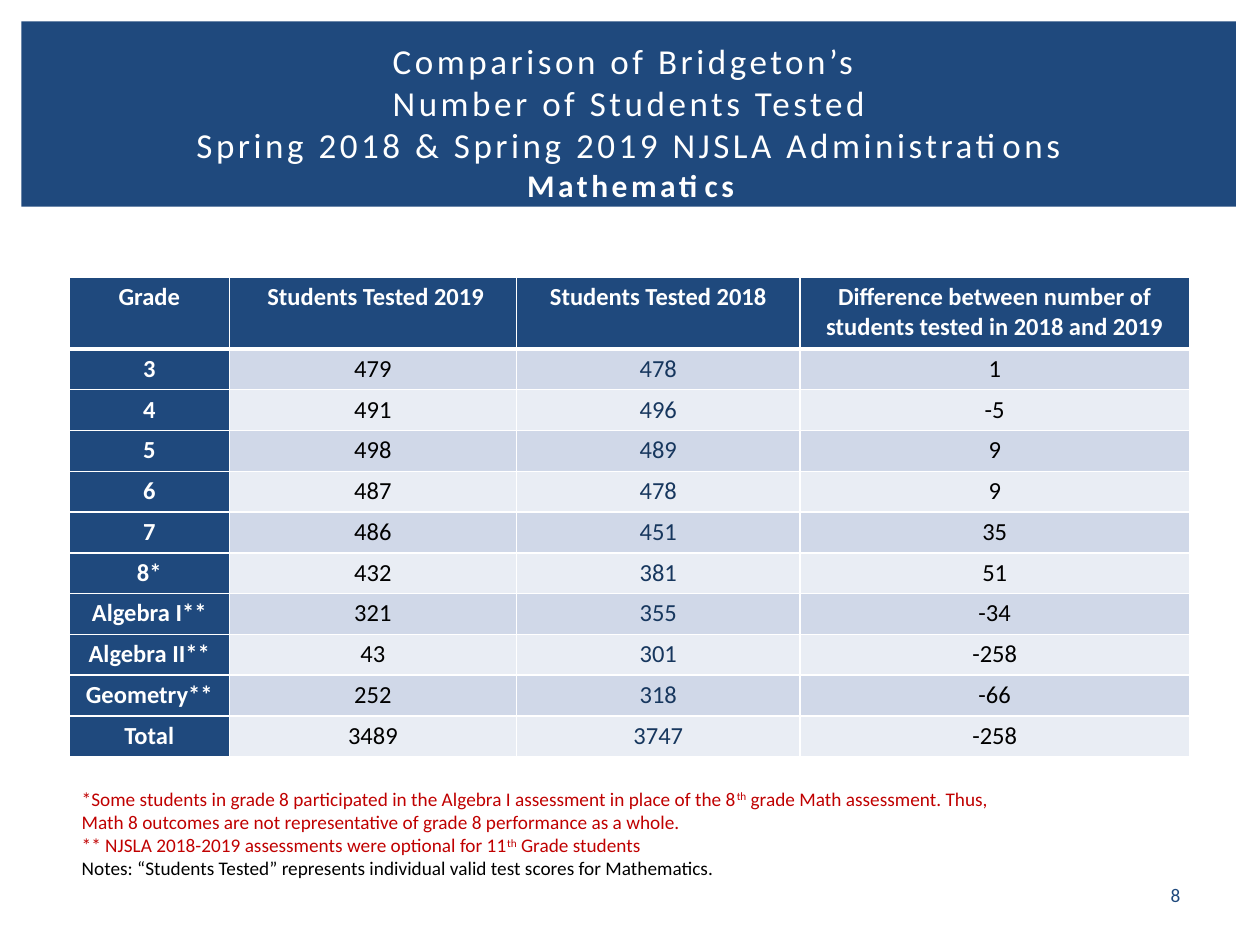
from dataclasses import dataclass

from lxml.etree import SubElement
from pptx import Presentation
from pptx.dml.color import RGBColor
from pptx.enum.shapes import MSO_SHAPE
from pptx.enum.text import MSO_ANCHOR, MSO_AUTO_SIZE, PP_ALIGN
from pptx.oxml.ns import qn
from pptx.util import Inches, Pt


@dataclass(frozen=True)
class Theme:
    font: str = "Calibri"
    navy: str = "1F497D"
    dark_blue: str = "17375E"
    white: str = "FFFFFF"
    black: str = "000000"
    red: str = "C00000"
    bands: tuple = ("D0D8E8", "E9EDF4")
    title: int = 20
    subject: int = 18
    table: int = 14
    note: int = 11


theme = Theme()
deck = Presentation()
deck.slide_width, deck.slide_height = Inches(10), Inches(7.5)
slide = deck.slides.add_slide(deck.slide_layouts[5])


def share(left, top, width, height):
    across, down = deck.slide_width / 100, deck.slide_height / 100
    return [round(n) for n in (left * across, top * down, width * across, height * down)]


def add_run(paragraph, text, size, color, bold=False):
    run = paragraph.add_run()
    run.text = text
    run.font.name = theme.font
    run.font.size = Pt(size)
    run.font.bold = bold
    run.font.color.rgb = RGBColor.from_string(color)
    return run


banner = slide.shapes.add_shape(MSO_SHAPE.RECTANGLE, *share(1.7, 2.27, 96.4, 19.6))
banner.shadow.inherit = False
banner.fill.solid()
banner.fill.fore_color.rgb = RGBColor.from_string(theme.navy)
banner.line.fill.background()

heading = slide.shapes.title
heading.element.addprevious(banner.element)
heading.left, heading.top, heading.width, heading.height = share(4.2, 5.2, 91.7, 15.33)
heading.text_frame.word_wrap = True
heading.text_frame.auto_size = MSO_AUTO_SIZE.NONE
heading.text_frame.vertical_anchor = MSO_ANCHOR.MIDDLE
heading_lines = heading.text_frame.paragraphs[0]
heading_lines.alignment = PP_ALIGN.CENTER
for line in (
    "Comparison of Bridgeton’s ",
    "Number of Students Tested",
    "Spring 2018 & Spring 2019 NJSLA Administrations",
):
    add_run(heading_lines, line, theme.title, theme.white).font._element.set("spc", "200")
    heading_lines.add_line_break()
subject = add_run(heading_lines, "Mathematics", theme.subject, theme.white, True)
subject.font._element.set("spc", "200")

counts = [
    ("Grade", " Students Tested 2019", "Students Tested 2018",
     "Difference between number of students tested in 2018 and 2019"),
    ("3", "479", "478", "1"),
    ("4", "491", "496", "-5"),
    ("5", "498", "489", "9"),
    ("6", "487", "478", "9"),
    ("7", "486", "451", "35"),
    ("8*", "432", "381", "51"),
    ("Algebra I**", "321", "355", "-34"),
    ("Algebra II**", "43", "301", "-258"),
    ("Geometry**", "252", "318", "-66"),
    ("Total", "3489", "3747", "-258"),
]
column_shares = (12.7, 22.8, 22.5, 30.9)
header_height, body_height = Inches(0.57), Inches(3.24)
column_colors = (theme.white, theme.black, theme.dark_blue, theme.black)

comparison = slide.shapes.add_table(
    len(counts), len(column_shares), *share(5.5, 29.33, sum(column_shares), 50.8)
).table
for column, width in zip(comparison.columns, column_shares):
    column.width = round(deck.slide_width * width / 100)
for row in comparison.rows:
    row.height = round(body_height / (len(counts) - 1))
comparison.rows[0].height = header_height

for r, values in enumerate(counts):
    for c, value in enumerate(values):
        is_label = r == 0 or c == 0
        cell = comparison.cell(r, c)
        cell.margin_left = cell.margin_right = Inches(0.11)
        cell.margin_top = cell.margin_bottom = Inches(0.04)
        borders = cell._tc.get_or_add_tcPr()
        for side in ("lnL", "lnR", "lnT", "lnB"):
            under_header = (r, side) in ((0, "lnB"), (1, "lnT"))
            edge = SubElement(borders, qn(f"a:{side}"), w=str(Pt(3 if under_header else 1)))
            edge_fill = SubElement(edge, qn("a:solidFill"))
            SubElement(edge_fill, qn("a:srgbClr"), val=theme.white)
        cell.fill.solid()
        cell.fill.fore_color.rgb = RGBColor.from_string(
            theme.navy if is_label else theme.bands[(r - 1) % 2]
        )
        entry = cell.text_frame.paragraphs[0]
        entry.alignment = PP_ALIGN.CENTER
        add_run(entry, value, theme.table, theme.white if is_label else column_colors[c], is_label)

footnotes = [
    (theme.red, (
        "*Some students in grade 8 participated in the Algebra I assessment in place of the 8",
        "th",
        " grade Math assessment. Thus, Math 8 outcomes are not representative of grade 8 "
        "performance as a whole.",
    )),
    (theme.red, (
        "** NJSLA 2018-2019 assessments were optional for 11", "th", " Grade students",
    )),
    (theme.black, (
        "Notes: “Students Tested” represents individual valid test scores for Mathematics.",
    )),
]
notes_frame = slide.shapes.add_textbox(*share(5.5, 82.67, 76.9, 11.2)).text_frame
notes_frame.word_wrap = True
for i, (color, parts) in enumerate(footnotes):
    footnote = notes_frame.add_paragraph() if i else notes_frame.paragraphs[0]
    for part in parts:
        wording = add_run(footnote, part, theme.note, color)
        if part == "th":
            wording.font._element.set("baseline", "30000")

page_frame = slide.shapes.add_textbox(*share(90.1, 92.67, 6.4, 4)).text_frame
page_frame.word_wrap = True
page_frame.vertical_anchor = MSO_ANCHOR.MIDDLE
page_number = page_frame.paragraphs[0]
page_number.alignment = PP_ALIGN.CENTER
add_run(page_number, "8", theme.note, theme.navy)

deck.save("out.pptx")
